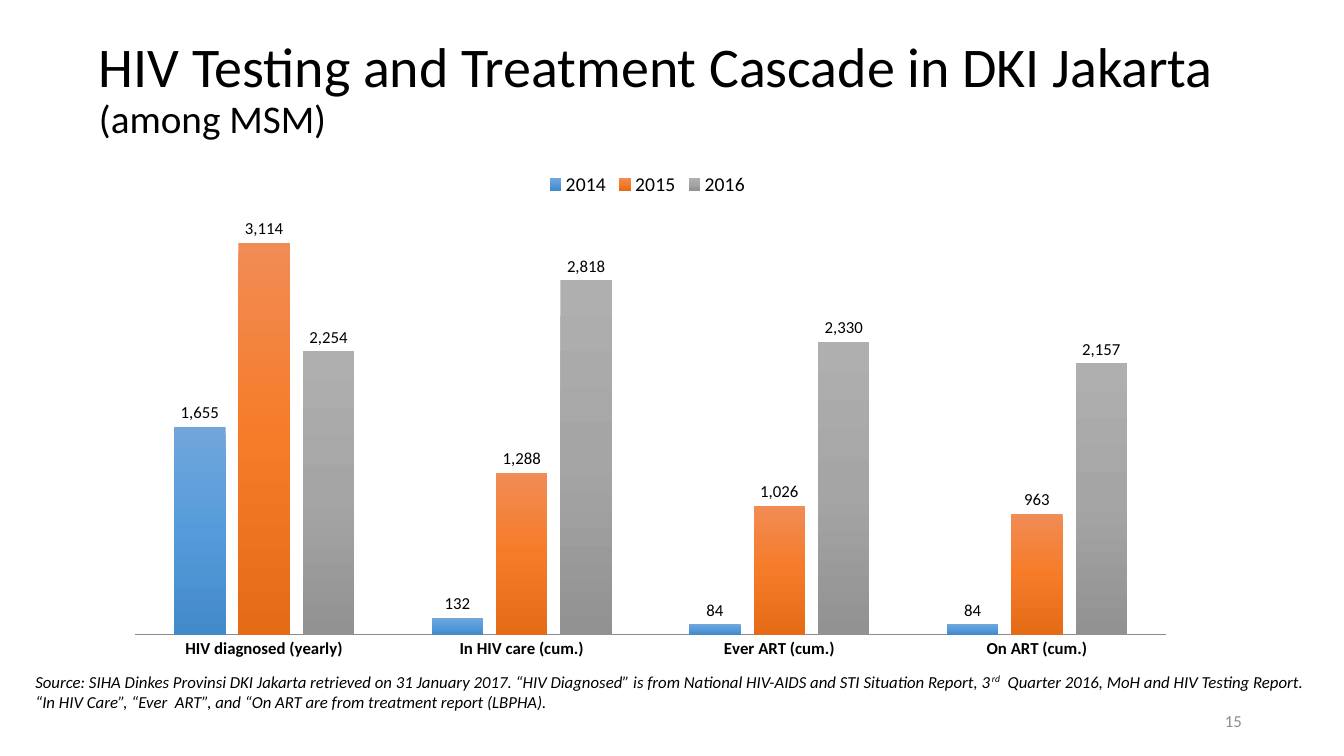
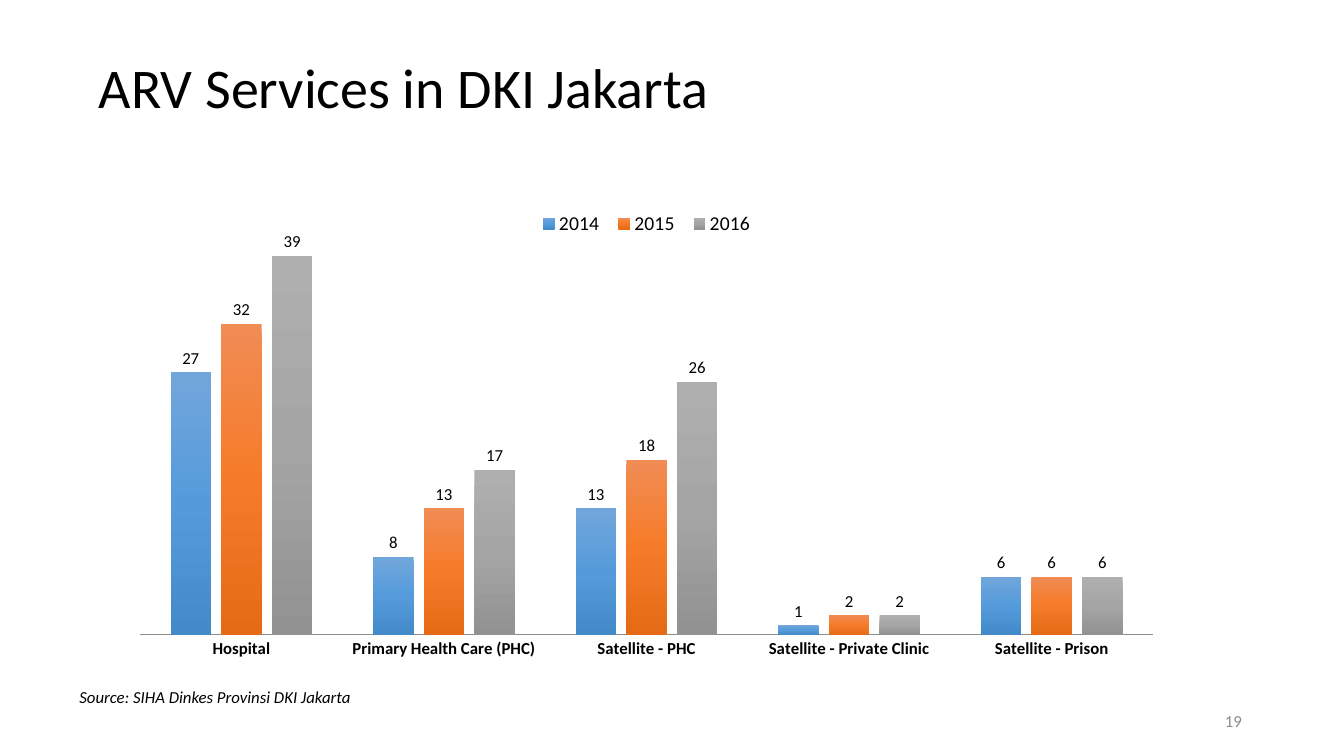
from lxml import etree
from pptx import Presentation
from pptx.chart import data as chart_data
from pptx.dml import color
from pptx.enum import chart as ce, text as te
from pptx.oxml import ns
from pptx import util as u

FONT = "Calibri"
BLACK, GREY = "000000", "8C8C8C"
YEARS = ("2014", "2015", "2016")
# Top, middle and bottom colour of each year's columns
GRADIENTS = (
    ("71A6DB", "559BDB", "438AC9"),
    ("F18C55", "F67B28", "E56B17"),
    ("AFAFAF", "A5A5A5", "929292"),
)
TITLE_AT = (2.24, 0, 29.74, 4.55)
NUMBER_AT = (23.93, 17.65, 7.62, 1.02)
PLOT_AREA = {"x": 0.02, "y": 0.1, "w": 0.96, "h": 0.84}


def rgb(value):
    return color.RGBColor.from_string(value)


def style_font(font, size, shade=BLACK, bold=False, italic=False):
    font.name, font.size = FONT, u.Pt(size)
    font.bold, font.italic = bold, italic
    font.color.rgb = rgb(shade)


def set_layout(element, index, **fractions):
    """Place a chart part by fractions of the chart's size."""
    for old in element.findall(ns.qn("c:layout")):
        element.remove(old)
    layout = etree.Element(ns.qn("c:layout"))
    manual = etree.SubElement(layout, ns.qn("c:manualLayout"))

    def add(tag, value):
        etree.SubElement(manual, ns.qn("c:" + tag)).set("val", str(value))

    if element.tag == ns.qn("c:plotArea"):
        add("layoutTarget", "inner")
    add("xMode", "edge")
    add("yMode", "edge")
    for tag, value in fractions.items():
        add(tag, value)
    element.insert(index, layout)


def fill_gradient(fill, shades):
    """Give a fill evenly spaced stops running from top to bottom."""
    fill.gradient()
    fill.gradient_angle = 270
    stops = fill.gradient_stops[0]._gs.getparent()
    for stop in list(stops):
        stops.remove(stop)
    for index, shade in enumerate(shades):
        stop = etree.SubElement(stops, ns.qn("a:gs"))
        stop.set("pos", str(index * 50000))
        etree.SubElement(stop, ns.qn("a:srgbClr")).set("val", shade)


class Slides:
    """Holds the deck, its shared style and the current slide."""

    def __init__(self):
        self.deck = Presentation()
        self.deck.slide_width, self.deck.slide_height = u.Cm(33.87), u.Cm(19.05)
        self.page = None

    def start(self, title, number):
        self.page = self.deck.slides.add_slide(self.deck.slide_layouts[5])
        self.title(title)
        self.number(number)

    def title(self, lines):
        box = self.page.shapes.title
        box.left, box.top, box.width, box.height = map(u.Cm, TITLE_AT)
        frame = box.text_frame
        frame.text = "\v".join(lines)
        frame.auto_size = te.MSO_AUTO_SIZE.NONE
        frame.vertical_anchor = te.MSO_ANCHOR.MIDDLE
        para = frame.paragraphs[0]
        para.alignment = te.PP_ALIGN.LEFT
        para.line_spacing = 0.9
        for span, size in zip(para.runs, (40, 28)):
            style_font(span.font, size)

    def text_box(self, at):
        frame = self.page.shapes.add_textbox(*map(u.Cm, at)).text_frame
        frame.word_wrap = True
        return frame

    def number(self, value):
        frame = self.text_box(NUMBER_AT)
        frame.vertical_anchor = te.MSO_ANCHOR.MIDDLE
        para = frame.paragraphs[0]
        para.text = str(value)
        para.alignment = te.PP_ALIGN.RIGHT
        style_font(para.runs[0].font, 12, GREY)

    def source(self, at, *parts):
        """Write the source line; every second part is superscript."""
        para = self.text_box(at).paragraphs[0]
        for index, part in enumerate(parts):
            span = para.add_run()
            span.text = part
            style_font(span.font, 12, italic=True)
            if index % 2:
                span._r.get_or_add_rPr().set("baseline", "30000")

    def chart(self, at, rows, top, legend, number_format="General"):
        """Draw yearly columns; rows maps each category to its values."""
        data = chart_data.CategoryChartData(number_format=number_format)
        data.categories = list(rows)
        for year, values in zip(YEARS, zip(*rows.values())):
            data.add_series(year, values)
        chart = self.page.shapes.add_chart(
            ce.XL_CHART_TYPE.COLUMN_CLUSTERED, *map(u.Cm, at), data).chart
        style_font(chart.font, 12)
        chart.has_title = False

        # Axes
        axis = chart.category_axis
        axis.major_tick_mark = axis.minor_tick_mark = ce.XL_TICK_MARK.NONE
        axis.format.line.color.rgb = rgb(GREY)
        axis.format.line.width = u.Pt(0.75)
        style_font(axis.tick_labels.font, 12, bold=True)
        scale = chart.value_axis
        scale.visible = scale.has_major_gridlines = False
        scale.minimum_scale, scale.maximum_scale = 0, top

        # Columns and their values
        plot = chart.plots[0]
        plot.gap_width, plot.overlap = 150, -25
        plot.vary_by_categories = False
        plot.has_data_labels = True
        labels = plot.data_labels
        labels.show_value = True
        labels.position = ce.XL_LABEL_POSITION.OUTSIDE_END
        labels.number_format = number_format
        labels.number_format_is_linked = False
        style_font(labels.font, 12)
        for series, shades in zip(plot.series, GRADIENTS):
            fill_gradient(series.format.fill, shades)
            series.invert_if_negative = False

        # Legend and plot area
        chart.has_legend = True
        chart.legend.position = ce.XL_LEGEND_POSITION.TOP
        chart.legend.include_in_layout = False
        style_font(chart.legend.font, 14)
        set_layout(chart.legend._element, 1, **legend)
        set_layout(plot._element.getparent(), 0, **PLOT_AREA)


def main():
    slides = Slides()

    # Testing and treatment cascade
    slides.start(
        ["HIV Testing and Treatment Cascade in DKI Jakarta ", "(among MSM)"], 15)
    slides.chart(
        (2.87, 3.58, 27.05, 13.21),
        {
            "HIV diagnosed (yearly)": (1655, 3114, 2254),
            "In HIV care (cum.)": (132, 1288, 2818),
            "Ever ART (cum.)": (84, 1026, 2330),
            "On ART (cum.)": (84, 963, 2157),
        },
        top=3500, legend={"x": 0.4, "y": 0.05}, number_format="#,##0")
    slides.source(
        (0.64, 16.79, 32.72, 1.27),
        "Source: SIHA Dinkes Provinsi DKI Jakarta retrieved on 31 January 2017. "
        "“HIV Diagnosed” is from National HIV-AIDS and STI Situation Report, 3",
        "rd",
        "  Quarter 2016, MoH and HIV Testing Report. “In HIV Care”, "
        "“Ever  ART”, and “On ART are from treatment report (LBPHA).")

    # Services by type of provider
    slides.start(["ARV Services in DKI Jakarta"], 19)
    slides.chart(
        (3, 3.66, 26.59, 13.13),
        {
            "Hospital": (27, 32, 39),
            "Primary Health Care (PHC)": (8, 13, 17),
            "Satellite - PHC": (13, 18, 26),
            "Satellite - Private Clinic": (1, 2, 2),
            "Satellite - Prison": (6, 6, 6),
        },
        top=45, legend={"x": 0.39, "y": 0.12, "w": 0.22, "h": 0.06})
    slides.source(
        (1.75, 17.17, 31.6, 0.76), "Source: SIHA Dinkes Provinsi DKI Jakarta")

    slides.deck.save("out.pptx")


if __name__ == "__main__":
    main()
